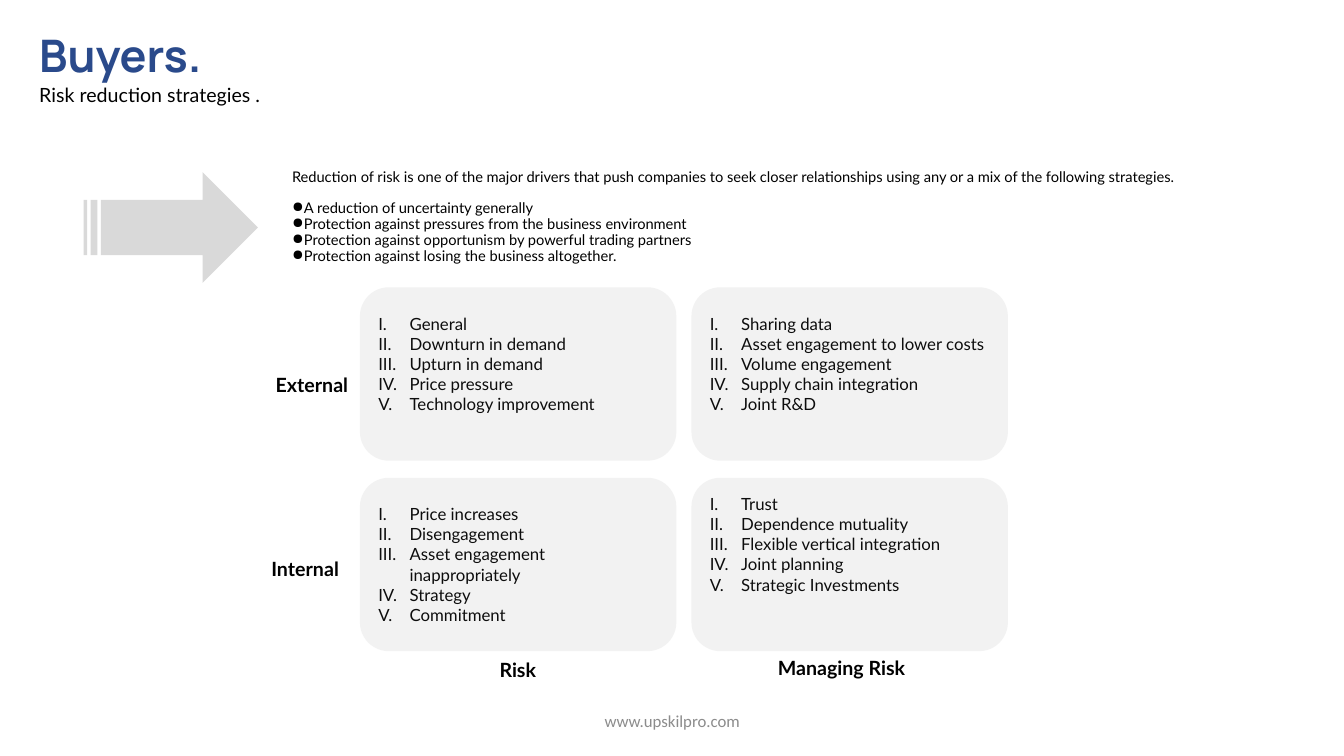
import pptx
import pptx.util
import pptx.dml.color
import pptx.enum.shapes
import pptx.enum.text
import pptx.oxml.ns
import lxml.etree

Cm = pptx.util.Cm
Pt = pptx.util.Pt
Shape = pptx.enum.shapes.MSO_SHAPE
Align = pptx.enum.text.PP_ALIGN
Anchor = pptx.enum.text.MSO_ANCHOR

HUES = {"brand": "2A4A8B", "ink": "000000", "list": "0D0D0D",
        "card": "F2F2F2", "arrow": "D9D9D9", "foot": "8C8C8C"}

FONTS = {
    "title": {"name": "Manrope", "size": Pt(32), "bold": True},
    "lead": {"name": "Lato", "size": Pt(14), "bold": False},
    "intro": {"name": "Lato", "size": Pt(10.5)},
    "item": {"name": "Lato", "size": Pt(12)},
    "label": {"name": "Lato", "size": Pt(14), "bold": True},
    "foot": {"name": "Calibri", "size": Pt(12)},
}

INTRO = "Reduction of risk is one of the major drivers that push companies to seek closer relationships using any or a mix of the following strategies."
POINTS = [
    "A reduction of uncertainty generally",
    "Protection against pressures from the business environment",
    "Protection against opportunism by powerful trading partners",
    "Protection against losing the business altogether.",
]

CARDS = [
    [(["General", "Downturn in demand", "Upturn in demand",
       "Price pressure", "Technology improvement"], 1),
     (["Sharing data", "Asset engagement to lower costs", "Volume engagement",
       "Supply chain integration", "Joint R&D"], 1)],
    [(["Price increases", "Disengagement", "Asset engagement inappropriately",
       "Strategy", "Commitment"], 0),
     (["Trust", "Dependence mutuality", "Flexible vertical integration",
       "Joint planning", "Strategic Investments"], 2)],
]

LABELS = [("External", -2.8, 2.03, 3.18), ("Internal", -2.97, 6.68, 3.18),
          ("Risk", 2.39, 9.22, 3.18), ("Managing Risk", 8.61, 9.17, 7.06)]


def write(para, text, font, hue):
    """Add a run of text in the given font and colour."""
    run = para.add_run()
    run.text = text
    for key, value in FONTS[font].items():
        setattr(run.font, key, value)
    run.font.color.rgb = pptx.dml.color.RGBColor.from_string(HUES[hue])


def mark(para, tag, indent, **attrs):
    """Give a paragraph a bullet or number with a hanging indent."""
    props = para._p.get_or_add_pPr()
    props.set("marL", str(Cm(indent)))
    props.set("indent", str(-Cm(indent)))
    lxml.etree.SubElement(props, pptx.oxml.ns.qn(tag), **attrs)


def lines(frame, count):
    """Return the given number of paragraphs of a text frame."""
    for _ in range(count - 1):
        frame.add_paragraph()
    return frame.paragraphs


def text(slide, box, anchor=Anchor.TOP):
    """Add a wrapping text box and return its frame."""
    frame = slide.shapes.add_textbox(*map(Cm, box)).text_frame
    frame.word_wrap = True
    frame.vertical_anchor = anchor
    return frame


def block(slide, kind, box, hue):
    """Add a plain filled shape without outline or shadow."""
    shape = slide.shapes.add_shape(kind, *map(Cm, box))
    shape.shadow.inherit = False
    shape.fill.solid()
    shape.fill.fore_color.rgb = pptx.dml.color.RGBColor.from_string(HUES[hue])
    shape.line.fill.background()
    return shape


def head(slide, box):
    """Place the title and the line under it."""
    top, lead = lines(text(slide, box), 2)
    write(top, "Buyers.", "title", "brand")
    write(lead, "Risk reduction strategies .", "lead", "ink")
    lead.line_spacing = 1.07


def intro(slide, box):
    """Place the arrow and the introduction with its points."""
    left, top, width, height = box
    block(slide, Shape.STRIPED_RIGHT_ARROW, (left, top + 0.71, 4.39, 2.79), "arrow")
    frame = text(slide, (left + 5, top, width - 5, height), Anchor.MIDDLE)
    paras = lines(frame, len(POINTS) + 1)
    write(paras[0], INTRO, "intro", "ink")
    for para, point in zip(paras[1:], POINTS):
        mark(para, "a:buChar", 0.3, char="●")
        write(para, point, "intro", "ink")
    for para in paras:
        para.line_spacing = 0.9
    paras[1].space_before = Pt(11.4)


def card(slide, box, items, spare):
    """Place one rounded card with a numbered list, raised by spare lines."""
    frame = block(slide, Shape.ROUNDED_RECTANGLE, box, "card").text_frame
    frame.word_wrap = True
    frame.vertical_anchor = Anchor.MIDDLE
    frame.margin_bottom = Cm(0.13 + 0.51 * spare)
    for para, item in zip(lines(frame, len(items)), items):
        para.alignment = Align.LEFT
        mark(para, "a:buAutoNum", 0.79, type="romanUcPeriod")
        write(para, item, "item", "list")


def grid(slide, box):
    """Place the two by two cards and the labels of rows and columns."""
    left, top, width, height = box
    wide, high = (width - 0.38) / 2, (height - 0.43) / 2
    for row, cards in enumerate(CARDS):
        for col, (items, spare) in enumerate(cards):
            place = (left + col * (wide + 0.38), top + row * (high + 0.43), wide, high)
            card(slide, place, items, spare)
    for name, right, down, span in LABELS:
        para = text(slide, (left + right, top + down, span, 0.79)).paragraphs[0]
        para.alignment = Align.CENTER
        write(para, name, "label", "ink")


def foot(slide, box):
    """Place the web address at the bottom."""
    para = text(slide, box, Anchor.MIDDLE).paragraphs[0]
    para.alignment = Align.CENTER
    write(para, "www.upskilpro.com", "foot", "foot")


def main():
    """Build the slide and save it."""
    deck = pptx.Presentation()
    deck.slide_width, deck.slide_height = Cm(33.87), Cm(19.05)
    slide = deck.slides.add_slide(deck.slide_layouts[6])
    head(slide, (0.74, 0.58, 17.81, 2.24))
    intro(slide, (2.11, 3.63, 28.72, 3.68))
    grid(slide, (9.07, 7.24, 16.33, 9.17))
    foot(slide, (11.23, 17.65, 11.43, 1.02))
    deck.save("out.pptx")


if __name__ == "__main__":
    main()
